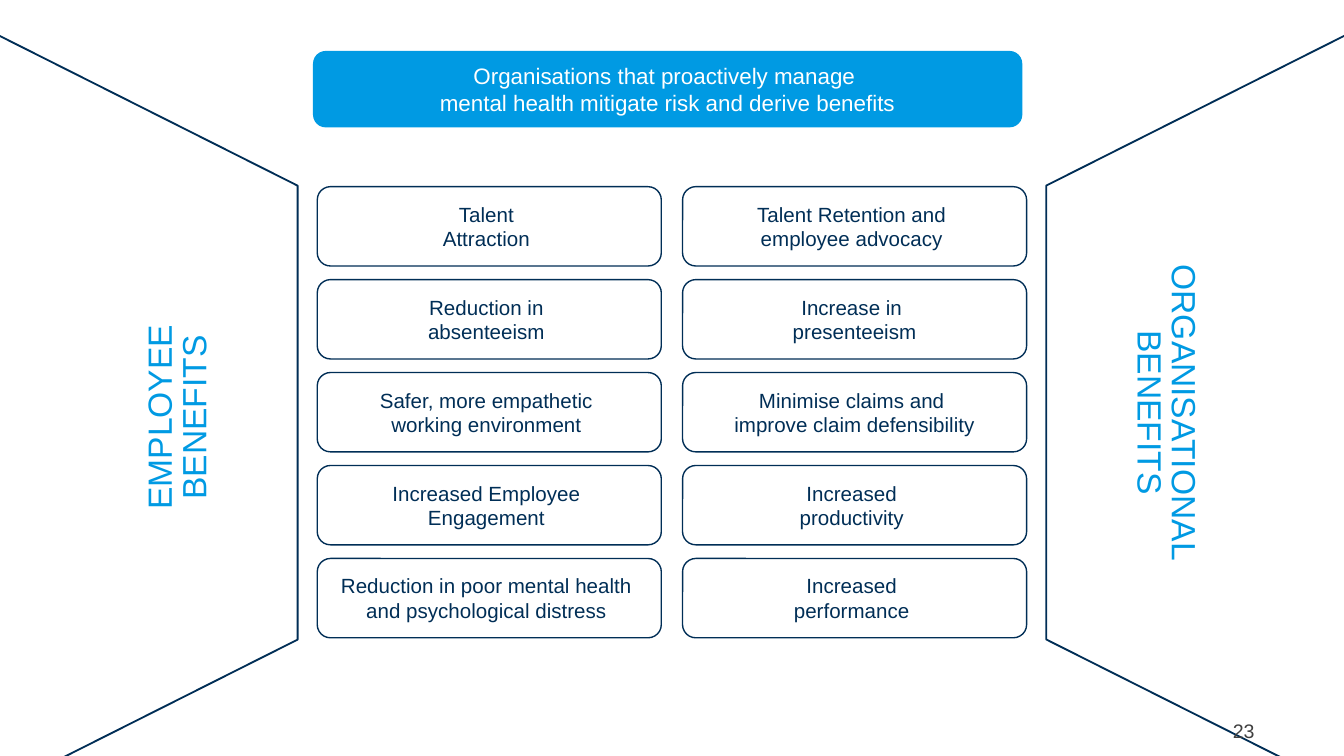
from dataclasses import dataclass

from pptx import Presentation
from pptx.dml.color import RGBColor
from pptx.enum.shapes import MSO_SHAPE
from pptx.enum.text import MSO_ANCHOR, PP_ALIGN
from pptx.util import Pt

ROUNDED = MSO_SHAPE.ROUNDED_RECTANGLE
TRAPEZOID = MSO_SHAPE.FLOWCHART_MANUAL_OPERATION
MIDDLE = MSO_ANCHOR.MIDDLE
CENTER, RIGHT = PP_ALIGN.CENTER, PP_ALIGN.RIGHT


@dataclass(frozen=True)
class Theme:
    """Colours, font and type sizes of the slide."""
    navy: RGBColor = RGBColor(0x00, 0x2E, 0x56)
    blue: RGBColor = RGBColor(0x00, 0x9A, 0xE3)
    white: RGBColor = RGBColor(0xFF, 0xFF, 0xFF)
    grey: RGBColor = RGBColor(0x40, 0x40, 0x40)
    font: str = "Arial"
    card_size: float = 11
    banner_size: float = 12
    side_size: float = 18
    number_size: float = 10.5


THEME = Theme()
BANNER = "Organisations that proactively manage \vmental health mitigate risk and derive benefits"
EMPLOYEE_CARDS = (
    "Talent \vAttraction ",
    "Reduction in \vabsenteeism ",
    "Safer, more empathetic \vworking environment ",
    "Increased Employee \vEngagement ",
    "Reduction in poor mental health \vand psychological distress ",
)
ORGANISATION_CARDS = (
    "Talent Retention and \vemployee advocacy ",
    "Increase in \vpresenteeism",
    "Minimise claims and \vimprove claim defensibility",
    "Increased \vproductivity ",
    "Increased \vperformance ",
)
CARD_TOP, CARD_WIDTH, CARD_HEIGHT, CARD_PITCH = 100, 184.3, 42.5, 49.8


def write_text(shape, text, size, color, align=CENTER, line_spacing=None):
    """Fill a shape with middle-anchored text in one style."""
    frame = shape.text_frame
    frame.word_wrap = True
    frame.vertical_anchor = MIDDLE
    frame.text = text
    for para in frame.paragraphs:
        para.alignment = align
        para.line_spacing = line_spacing
        for span in para.runs:
            span.font.name = THEME.font
            span.font.size = Pt(size)
            span.font.color.rgb = color


def set_insets(shape, left, top, right, bottom):
    """Set the four text margins of a shape."""
    frame = shape.text_frame
    frame.margin_left, frame.margin_top = Pt(left), Pt(top)
    frame.margin_right, frame.margin_bottom = Pt(right), Pt(bottom)


def add_outline(page, kind, left, top, width, height, weight):
    """Add an unfilled shape with a navy outline."""
    shape = page.shapes.add_shape(kind, Pt(left), Pt(top), Pt(width), Pt(height))
    shape.shadow.inherit = False
    shape.fill.background()
    shape.line.color.rgb = THEME.navy
    shape.line.width = Pt(weight)
    return shape


def add_cards(page, left, labels):
    """Add one column of benefit cards."""
    for row, label in enumerate(labels):
        top = CARD_TOP + row * CARD_PITCH
        card = add_outline(page, ROUNDED, left, top, CARD_WIDTH, CARD_HEIGHT, 0.75)
        write_text(card, label, THEME.card_size, THEME.navy)


def add_banner(page):
    """Add the filled headline banner."""
    banner = page.shapes.add_shape(ROUNDED, Pt(167.7), Pt(27.3), Pt(380), Pt(41))
    banner.shadow.inherit = False
    banner.fill.solid()
    banner.fill.fore_color.rgb = THEME.blue
    banner.line.fill.background()
    write_text(banner, BANNER, THEME.banner_size, THEME.white)


def add_side(page, left, label, flipped=False):
    """Add a trapezoid turned on its side, with its heading."""
    side = add_outline(page, TRAPEZOID, left, 140.4, 405.3, 161.3, 1)
    side.rotation = 270
    if flipped:
        side._element.spPr.get_or_add_xfrm().set("flipV", "1")
    set_insets(side, 8.5, 42.5, 8.5, 8.5)
    write_text(side, label, THEME.side_size, THEME.blue, line_spacing=0.85)


def add_page_number(page, number):
    """Add the page number at the lower right."""
    box = page.shapes.add_textbox(Pt(615.6), Pt(380.9), Pt(56.5), Pt(23.8))
    set_insets(box, 0, 0, 0, 3)
    write_text(box, number, THEME.number_size, THEME.grey, RIGHT)


def main():
    """Build and save the slide."""
    deck = Presentation()
    deck.slide_width, deck.slide_height = Pt(720), Pt(405)
    page = deck.slides.add_slide(deck.slide_layouts[6])
    add_cards(page, 170, EMPLOYEE_CARDS)
    add_cards(page, 365.7, ORGANISATION_CARDS)
    add_banner(page)
    add_side(page, -123.8, "EMPLOYEE \nBENEFITS ")
    add_side(page, 438.5, "ORGANISATIONAL\nBENEFITS", flipped=True)
    add_page_number(page, "23")
    deck.save("out.pptx")


if __name__ == "__main__":
    main()
